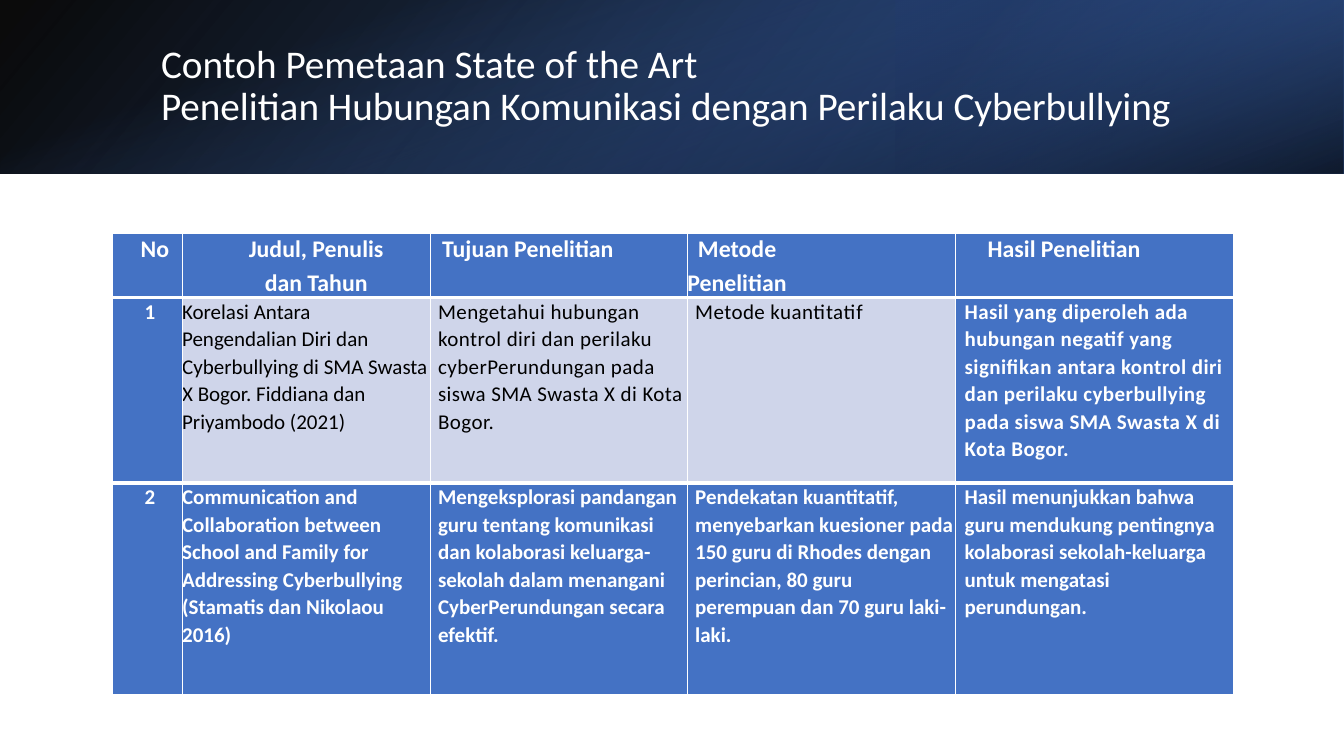
from lxml import etree
from pptx import Presentation
from pptx.dml.color import RGBColor
from pptx.enum.shapes import MSO_SHAPE
from pptx.enum.text import MSO_ANCHOR, PP_ALIGN
from pptx.oxml.ns import qn
from pptx.util import Cm, Pt

RECTANGLE = MSO_SHAPE.RECTANGLE
MIDDLE = MSO_ANCHOR.MIDDLE
LEFT, CENTER = PP_ALIGN.LEFT, PP_ALIGN.CENTER

WHITE = RGBColor(0xFF, 0xFF, 0xFF)
BLACK = RGBColor(0, 0, 0)
BLUE = RGBColor(0x44, 0x72, 0xC4)
DEEP_BLUE = RGBColor(0x2F, 0x55, 0x97)
NAVY = RGBColor(0x20, 0x38, 0x64)
PALE_BLUE = RGBColor(0xCF, 0xD5, 0xEA)

FONT = "Calibri"
SLIDE_WIDTH, SLIDE_HEIGHT = 33.87, 19.05
BAND_HEIGHT = 4.37
BAND_OFFSET = (SLIDE_WIDTH - BAND_HEIGHT) / 2

TITLE = "Contoh Pemetaan State of the Art\vPenelitian Hubungan Komunikasi dengan Perilaku Cyberbullying"
COLUMN_WIDTHS = [1.75, 6.25, 6.48, 6.76, 7.01]
ROW_HEIGHTS = [1.63, 4.67, 5.33]
HEADERS = ["No", "Judul, Penulis\ndan Tahun", "Tujuan Penelitian", "Metode\nPenelitian", "Hasil Penelitian"]
HEADER_INDENTS = [[0.38], [0.51, 0.51], [0.3], [0.27, 0], [0.81]]
BODY_INDENTS = [0.13, 0, 0.2, 0.2, 0.23]
STUDIES = [
    [
        "1",
        "Korelasi Antara Pengendalian Diri dan Cyberbullying di SMA Swasta X Bogor. Fiddiana dan Priyambodo (2021)",
        "Mengetahui hubungan kontrol diri dan perilaku cyberPerundungan pada siswa SMA Swasta X di Kota Bogor.",
        "Metode kuantitatif",
        "Hasil yang diperoleh ada hubungan negatif yang signifikan antara kontrol diri dan perilaku "
        "cyberbullying pada siswa SMA Swasta X di Kota Bogor.",
    ],
    [
        "2",
        "Communication and Collaboration between School and Family for Addressing Cyberbullying "
        "(Stamatis dan Nikolaou 2016)",
        "Mengeksplorasi pandangan guru tentang komunikasi dan kolaborasi keluarga-sekolah dalam menangani "
        "CyberPerundungan secara efektif.",
        "Pendekatan kuantitatif, menyebarkan kuesioner pada 150 guru di Rhodes dengan perincian, "
        "80 guru perempuan dan 70 guru laki-laki.",
        "Hasil menunjukkan bahwa guru mendukung pentingnya kolaborasi sekolah-keluarga untuk mengatasi perundungan.",
    ],
]


def apply_format(target, values):
    for name, value in values.items():
        setattr(target, name, value)


def format_spans(para, size, color, bold=False, tracking=0):
    for span in para.runs:
        apply_format(span.font, {"name": FONT, "size": Pt(size), "bold": bold})
        span.font.color.rgb = color
        if tracking:
            span.font._element.set("spc", str(tracking))


def add_gradient_band(page, place, stops, angle, rotation=0, flipped=False):
    band = page.shapes.add_shape(RECTANGLE, *[Cm(length) for length in place])
    band.shadow.inherit = False
    band.line.fill.background()
    band.rotation = rotation
    properties = band._element.spPr
    if flipped:
        properties.find(qn("a:xfrm")).set("flipH", "1")
    band.fill.gradient()
    band.fill.gradient_angle = 360 - angle
    for stop, (position, color, opacity) in zip(band.fill.gradient_stops, stops):
        stop.position = position / 100
        stop.color.rgb = color
        if opacity < 100:
            tint = stop._gs.find(qn("a:srgbClr"))
            etree.SubElement(tint, qn("a:alpha")).set("val", str(opacity * 1000))


def add_title(page):
    box = page.shapes.add_textbox(Cm(3.81), Cm(0.97), Cm(27.89), Cm(2.44))
    apply_format(box.text_frame, {"word_wrap": True, "vertical_anchor": MIDDLE})
    para = box.text_frame.paragraphs[0]
    apply_format(para, {"text": TITLE, "line_spacing": 0.9})
    format_spans(para, 28, WHITE)


def set_borders(cell, widths):
    properties = cell._tc.get_or_add_tcPr()
    for side, width in zip("LRTB", widths):
        line = etree.SubElement(properties, qn(f"a:ln{side}"), w=str(Pt(width)))
        fill = etree.SubElement(line, qn("a:solidFill"))
        etree.SubElement(fill, qn("a:srgbClr"), val=str(WHITE))


def fill_cell(cell, text, fill, borders, indents, alignment, after=0, **style):
    apply_format(cell, {f"margin_{side}": 0 for side in ("left", "right", "top", "bottom")})
    set_borders(cell, borders)
    cell.fill.solid()
    cell.fill.fore_color.rgb = fill
    cell.text_frame.text = text
    for index, (para, indent) in enumerate(zip(cell.text_frame.paragraphs, indents)):
        apply_format(para, {
            "alignment": alignment,
            "line_spacing": 1.07,
            "space_before": Pt(2 if index else 0),
            "space_after": Pt(after),
        })
        properties = para._p.get_or_add_pPr()
        properties.set("marL", str(Cm(indent)))
        properties.set("indent", "0")
        format_spans(para, **style)


def add_study_table(page):
    frame = page.shapes.add_table(
        len(ROW_HEIGHTS), len(COLUMN_WIDTHS), Cm(2.84), Cm(5.87),
        Cm(sum(COLUMN_WIDTHS)), Cm(sum(ROW_HEIGHTS)))
    table = frame.table
    table.horz_banding = False
    for column, width in zip(table.columns, COLUMN_WIDTHS):
        column.width = Cm(width)
    for row, height in zip(table.rows, ROW_HEIGHTS):
        row.height = Cm(height)

    for column, (text, indents) in enumerate(zip(HEADERS, HEADER_INDENTS)):
        fill_cell(table.cell(0, column), text, BLUE, (1, 1, 1, 3), indents,
                  CENTER if column < 2 else LEFT, size=17, color=WHITE, bold=True)

    for row, study in enumerate(STUDIES, 1):
        for column, text in enumerate(study):
            pale = row == 1 and column in (1, 2, 3)
            borders = (1, 1, 3, 3) if row == 1 else (1, 1, 3, 1)
            fill_cell(table.cell(row, column), text, PALE_BLUE if pale else BLUE, borders,
                      [BODY_INDENTS[column]], LEFT if column else CENTER,
                      after=8 if column == 1 else 0, size=15, color=BLACK if pale else WHITE,
                      bold=not pale, tracking=30 if row == 1 and column > 1 else 0)


def main():
    deck = Presentation()
    apply_format(deck, {"slide_width": Cm(SLIDE_WIDTH), "slide_height": Cm(SLIDE_HEIGHT)})
    page = deck.slides.add_slide(deck.slide_layouts[6])
    add_gradient_band(page, (0, 0, SLIDE_WIDTH, BAND_HEIGHT),
                      [(0, BLACK, 96), (100, DEEP_BLUE, 100)], 140, flipped=True)
    add_gradient_band(page, (22.58, 0, 11.29, BAND_HEIGHT),
                      [(19, NAVY, 68), (100, BLUE, 79)], 320, rotation=180, flipped=True)
    add_gradient_band(page, (BAND_OFFSET, -BAND_OFFSET, BAND_HEIGHT, SLIDE_WIDTH),
                      [(23, BLUE, 0), (99, BLACK, 74)], 340, rotation=90)
    add_title(page)
    add_study_table(page)
    deck.save("out.pptx")


if __name__ == "__main__":
    main()
